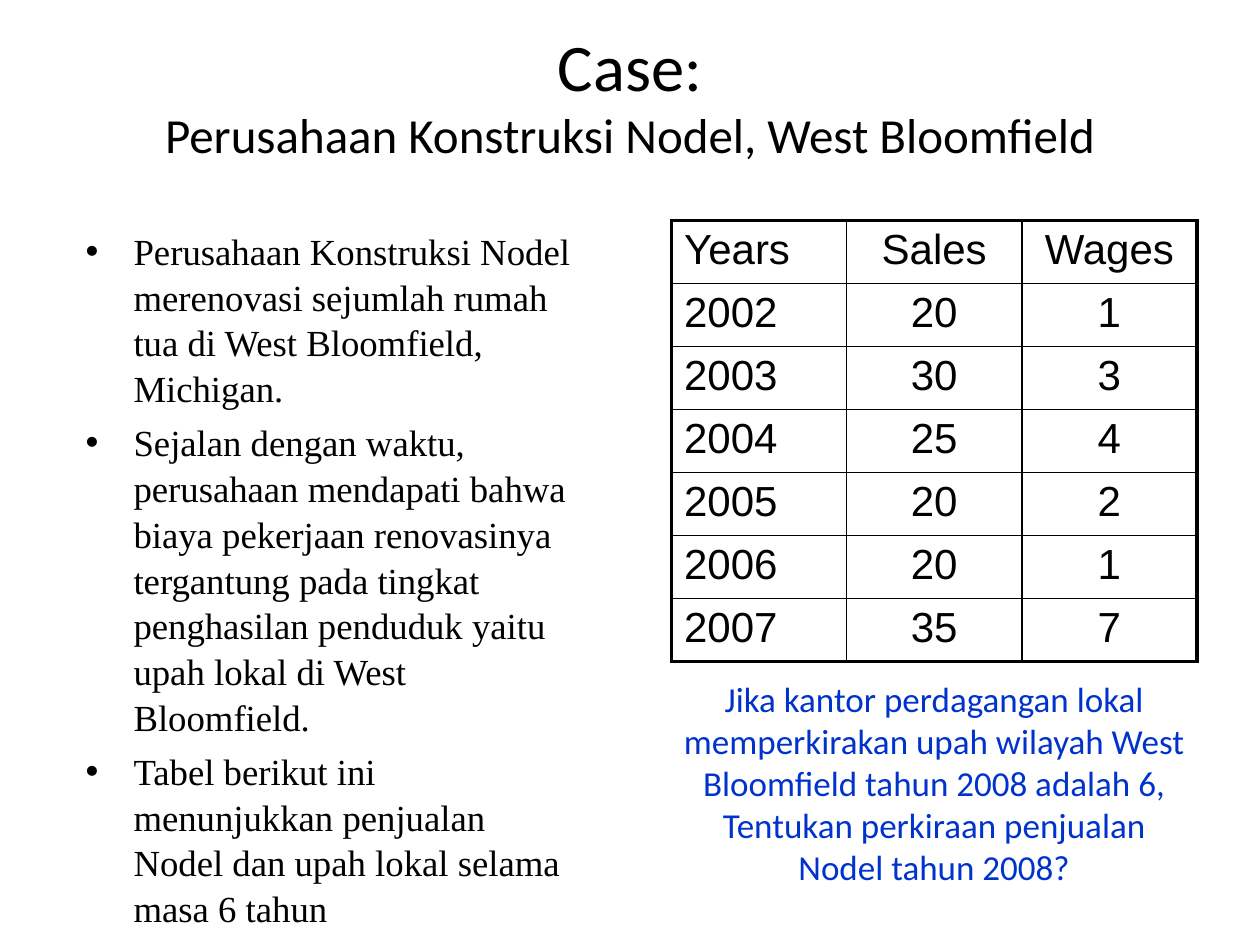
import dataclasses

import pptx
import pptx.dml.color
import pptx.enum.text
import pptx.oxml
import pptx.oxml.ns
import pptx.util

Inches = pptx.util.Inches
Pt = pptx.util.Pt
Align = pptx.enum.text.PP_ALIGN
BLACK = "000000"
BLUE = "0033CC"
THIN, THICK = 1, 2.25


@dataclasses.dataclass
class Box:
    left: float
    top: float
    width: float
    height: float

    def lengths(self) -> tuple:
        return tuple(Inches(value) for value in dataclasses.astuple(self))


@dataclasses.dataclass
class TextStyle:
    name: str
    size: float
    color: str = BLACK


TITLE_BOX = Box(0.5, 0, 9, 1.5)
BODY_BOX = Box(0.58, 1.75, 4.08, 5.5)
TABLE_BOX = Box(5.33, 1.75, 4.17, 3.5)
QUESTION_BOX = Box(5.33, 5.33, 4.17, 1.77)

BULLETS = [
    "Perusahaan Konstruksi Nodel merenovasi sejumlah rumah tua di West Bloomfield, Michigan.",
    "Sejalan dengan waktu, perusahaan mendapati bahwa biaya pekerjaan renovasinya "
    "tergantung pada tingkat penghasilan penduduk yaitu upah lokal di West Bloomfield.",
    "Tabel berikut ini menunjukkan penjualan Nodel dan upah lokal selama masa 6 tahun",
]
QUESTION = (
    "Jika kantor perdagangan lokal memperkirakan upah wilayah West Bloomfield "
    "tahun 2008 adalah 6, Tentukan perkiraan penjualan Nodel tahun 2008?"
)
SALES_AND_WAGES = [
    ("Years", "Sales", "Wages"),
    ("2002", "20", "1"),
    ("2003", "30", "3"),
    ("2004", "25", "4"),
    ("2005", "20", "2"),
    ("2006", "20", "1"),
    ("2007", "35", "7"),
]


def set_font(font, style: TextStyle) -> None:
    font.name = style.name
    font.size = Pt(style.size)
    font.color.rgb = pptx.dml.color.RGBColor.from_string(style.color)


def place(shape, box: Box) -> None:
    shape.left, shape.top, shape.width, shape.height = box.lengths()


def add_border(cell, side: str, width: float) -> None:
    namespace = pptx.oxml.ns.nsdecls("a")
    cell._tc.get_or_add_tcPr().append(pptx.oxml.parse_xml(
        f'<a:ln{side} {namespace} w="{Pt(width)}"><a:solidFill>'
        f'<a:srgbClr val="{BLACK}"/></a:solidFill></a:ln{side}>'
    ))


def fill_title(title) -> None:
    place(title, TITLE_BOX)
    frame = title.text_frame
    frame.auto_size = pptx.enum.text.MSO_AUTO_SIZE.NONE
    frame.vertical_anchor = pptx.enum.text.MSO_ANCHOR.MIDDLE
    paragraph = frame.paragraphs[0]
    paragraph.alignment = Align.CENTER
    heading = paragraph.add_run()
    heading.text = "Case:"
    set_font(heading.font, TextStyle("Calibri", 38))
    paragraph.add_line_break()
    subheading = paragraph.add_run()
    subheading.text = "Perusahaan Konstruksi Nodel, West Bloomfield"
    set_font(subheading.font, TextStyle("Calibri", 28))


def fill_body(body) -> None:
    place(body, BODY_BOX)
    frame = body.text_frame
    frame.auto_size = pptx.enum.text.MSO_AUTO_SIZE.NONE
    for index, text in enumerate(BULLETS):
        paragraph = frame.add_paragraph() if index else frame.paragraphs[0]
        paragraph.text = text
        paragraph.line_spacing = 1.04
        paragraph.space_before = Pt(4.5 if index else 0)
        properties = paragraph._p.get_or_add_pPr()
        properties.set("marL", str(Inches(0.38)))
        properties.set("indent", str(Inches(-0.38)))
        set_font(paragraph.font, TextStyle("Times New Roman", 21))


def add_sales_table(slide) -> None:
    last_row = len(SALES_AND_WAGES) - 1
    last_column = len(SALES_AND_WAGES[0]) - 1
    table = slide.shapes.add_table(last_row + 1, last_column + 1, *TABLE_BOX.lengths()).table
    table.first_row = False
    table.horz_banding = False
    for row, values in enumerate(SALES_AND_WAGES):
        for column, value in enumerate(values):
            cell = table.cell(row, column)
            cell.text = value
            paragraph = cell.text_frame.paragraphs[0]
            paragraph.alignment = Align.CENTER if column else Align.LEFT
            set_font(paragraph.font, TextStyle("Arial", 24))
            # Thick outer frame, thin inner grid
            outer_sides = {
                "L": column == 0,
                "R": column == last_column,
                "T": row == 0,
                "B": row == last_row,
            }
            for side, is_outer in outer_sides.items():
                add_border(cell, side, THICK if is_outer else THIN)
            cell.fill.background()


def add_question(slide) -> None:
    frame = slide.shapes.add_textbox(*QUESTION_BOX.lengths()).text_frame
    frame.word_wrap = True
    paragraph = frame.paragraphs[0]
    paragraph.text = QUESTION
    paragraph.alignment = Align.CENTER
    set_font(paragraph.font, TextStyle("Calibri", 20, BLUE))


def main() -> None:
    presentation = pptx.Presentation()
    presentation.slide_width = Inches(10)
    presentation.slide_height = Inches(7.5)
    slide = presentation.slides.add_slide(presentation.slide_layouts[1])

    # Title and case description
    fill_title(slide.shapes.title)
    fill_body(slide.placeholders[1])

    # Figures and the question about them
    add_sales_table(slide)
    add_question(slide)

    presentation.save("out.pptx")


if __name__ == "__main__":
    main()
